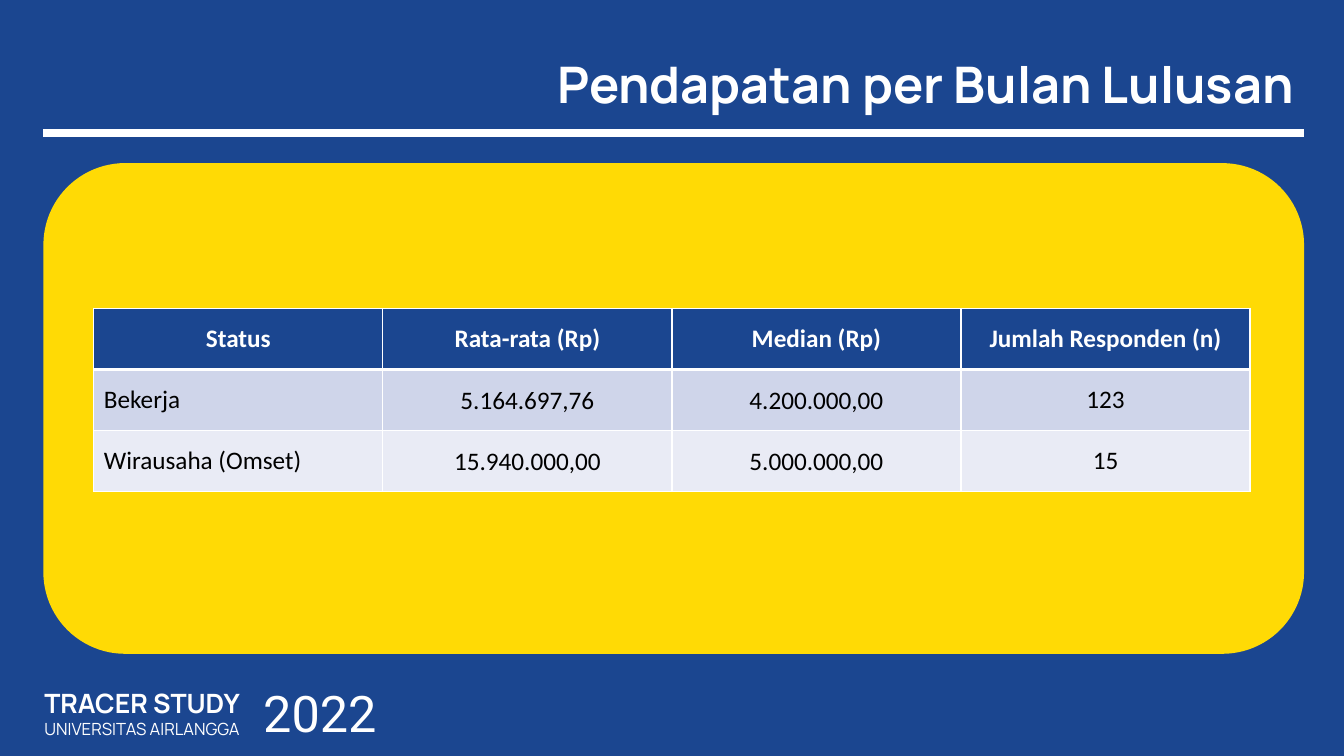
from dataclasses import dataclass

from lxml.etree import SubElement
from pptx import Presentation
from pptx.dml.color import RGBColor
from pptx.enum.shapes import MSO_CONNECTOR, MSO_SHAPE
from pptx.enum.text import MSO_ANCHOR, PP_ALIGN
from pptx.oxml.ns import qn
from pptx.util import Pt


@dataclass(frozen=True)
class Theme:
    blue: str = "1B4690"
    gold: str = "FFDA05"
    white: str = "FFFFFF"
    black: str = "000000"
    bands: tuple = ("CFD5EA", "E9EBF5")
    head: str = "Manrope"
    year: str = "Roboto"
    body: str = "Calibri"
    big: int = 36
    brand: int = 19
    small: int = 12
    cell: int = 18


theme = Theme()


def style(para, face, size, color, bold=False, align=PP_ALIGN.CENTER):
    para.alignment = align
    for run in para.runs:
        run.font.name = face
        run.font.size = Pt(size)
        run.font.bold = bold
        run.font.color.rgb = RGBColor.from_string(color)


def edge(cell, side, width):
    """Draw one white border; call before the cell gets its fill."""
    line = SubElement(cell._tc.get_or_add_tcPr(), qn(f"a:ln{side}"), w=str(Pt(width)))
    fill = SubElement(line, qn("a:solidFill"))
    SubElement(fill, qn("a:srgbClr"), val=theme.white)


deck = Presentation()
deck.slide_width, deck.slide_height = Pt(960), Pt(540)
slide = deck.slides.add_slide(deck.slide_layouts[5])
slide.background.fill.solid()
slide.background.fill.fore_color.rgb = RGBColor.from_string(theme.blue)
shapes = slide.shapes
left, width = 31, 900.5

# Gold panel and rule under the title
panel = shapes.add_shape(MSO_SHAPE.ROUNDED_RECTANGLE, Pt(left), Pt(116.5), Pt(width), Pt(350.5))
panel.shadow.inherit = False
panel.fill.solid()
panel.fill.fore_color.rgb = RGBColor.from_string(theme.gold)
panel.line.fill.background()

rule = shapes.add_connector(MSO_CONNECTOR.STRAIGHT, Pt(left), Pt(95), Pt(left + width), Pt(95))
rule.line.color.rgb = RGBColor.from_string(theme.white)
rule.line.width = Pt(6)
SubElement(rule._element.spPr, qn("a:effectLst"))

# Title
title = shapes.title
title.left, title.top, title.width, title.height = Pt(left), Pt(29.5), Pt(width), Pt(65.5)
title.text_frame.text = "Pendapatan per Bulan Lulusan"
title.text_frame.vertical_anchor = MSO_ANCHOR.MIDDLE
para = title.text_frame.paragraphs[0]
para.line_spacing = 0.9
style(para, theme.head, theme.big, theme.white, True, PP_ALIGN.RIGHT)

# Footer: box, then (text, font, size, bold) for each line
footer = [
    ((22.3, 487.4, 158.4, 44.6), [
        ("TRACER STUDY", theme.head, theme.brand, True),
        ("UNIVERSITAS AIRLANGGA", theme.head, theme.small, False),
    ]),
    ((172, 483.8, 113, 51), [("2022", theme.year, theme.big, False)]),
]
for box, lines in footer:
    frame = shapes.add_textbox(*map(Pt, box)).text_frame
    frame.word_wrap = False
    frame.text = "\n".join(line[0] for line in lines)
    for para, (text, face, size, bold) in zip(frame.paragraphs, lines):
        style(para, face, size, theme.white, bold)

# Income table
rows = [
    ("Status", "Rata-rata (Rp)", "Median (Rp)", "Jumlah Responden (n)"),
    ("Bekerja", "5.164.697,76", "4.200.000,00", "123"),
    ("Wirausaha (Omset)", "15.940.000,00", "5.000.000,00", "15"),
]
table = shapes.add_table(3, 4, Pt(67), Pt(220.2), Pt(826), Pt(131.1)).table
for row, texts in enumerate(rows):
    top = row == 0
    table.rows[row].height = Pt(43.7)
    for col, text in enumerate(texts):
        cell = table.cell(row, col)
        cell.text = text
        cell.vertical_anchor = MSO_ANCHOR.MIDDLE
        if not top and col in (1, 2):
            cell.margin_left = cell.margin_right = cell.margin_top = Pt(0.75)
            cell.margin_bottom = Pt(0)
        for side in "LRTB":
            thick = (top and side == "B") or (row == 1 and side == "T")
            edge(cell, side, 3 if thick else 1)
        cell.fill.solid()
        shade = theme.blue if top else theme.bands[row - 1]
        cell.fill.fore_color.rgb = RGBColor.from_string(shade)
        style(cell.text_frame.paragraphs[0], theme.body, theme.cell,
              theme.white if top else theme.black, top,
              PP_ALIGN.CENTER if top or col else PP_ALIGN.LEFT)

deck.save("out.pptx")
